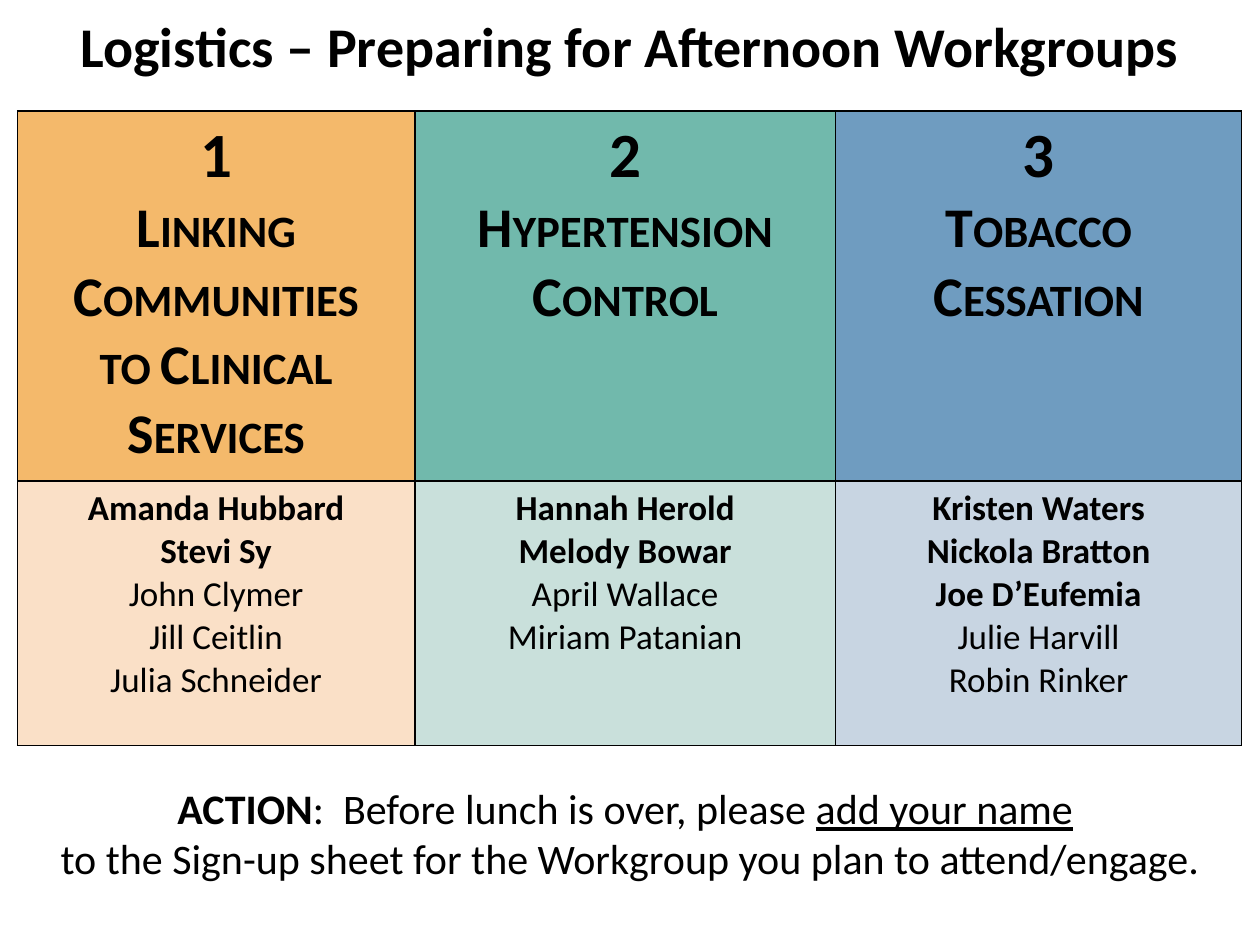
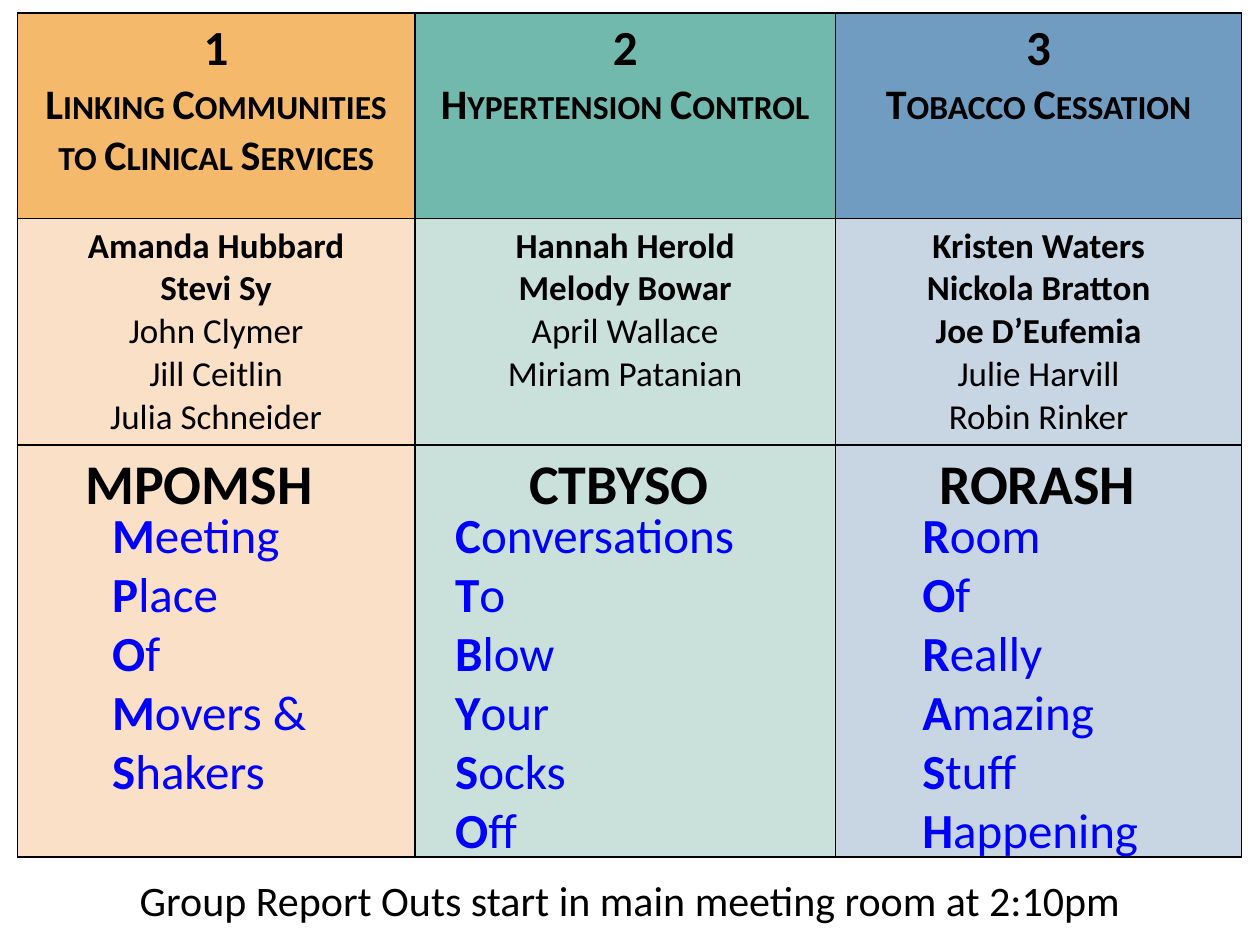
"""Build the two workgroup slides: preparing, and rooms with their acronyms."""
from lxml import etree
from pptx import Presentation
from pptx.dml.color import RGBColor
from pptx.enum.text import MSO_ANCHOR, MSO_AUTO_SIZE, PP_ALIGN
from pptx.oxml.ns import qn
from pptx.util import Pt

LEFT, CENTER = PP_ALIGN.LEFT, PP_ALIGN.CENTER
TOP, MIDDLE = MSO_ANCHOR.TOP, MSO_ANCHOR.MIDDLE
NO_FIT = MSO_AUTO_SIZE.NONE

FONT = "Calibri"
BLACK = RGBColor(0x00, 0x00, 0x00)
BLUE = RGBColor(0x00, 0x00, 0xFF)
DARK = [RGBColor(0xF4, 0xB9, 0x6B), RGBColor(0x71, 0xB9, 0xAC), RGBColor(0x6F, 0x9C, 0xC0)]
PALE = [RGBColor(0xFA, 0xE0, 0xC7), RGBColor(0xC9, 0xE0, 0xDB), RGBColor(0xC8, 0xD5, 0xE2)]

TITLE = "Logistics – Preparing for Afternoon Workgroups"
ACTION = [
    [("ACTION", "b"), (":  Before lunch is over, please ", ""), ("add your name", "u"), (" ", "")],
    [("to the Sign-up sheet for the Workgroup you plan to attend/engage.", "")],
]
REPORT = [[("Group Report Outs start in main meeting room at 2:10pm", "")]]

GROUPS = ["Linking Communities\vto Clinical Services", "Hypertension Control", "Tobacco Cessation"]
LEADS = [
    ["Amanda Hubbard", "Stevi Sy"],
    ["Hannah Herold", "Melody Bowar"],
    ["Kristen Waters", "Nickola Bratton", "Joe D’Eufemia"],
]
STAFF = [
    ["John Clymer", "Jill Ceitlin", "Julia Schneider"],
    ["April Wallace", "Miriam Patanian"],
    ["Julie Harvill", "Robin Rinker"],
]
ROOMS = [
    ("MPOMSH", ["Meeting", "Place", "Of", "Movers &", "Shakers"]),
    ("CTBYSO", ["Conversations", "To", "Blow", "Your", "Socks", "Off"]),
    ("RORASH", ["Room", "Of", "Really", "Amazing", "Stuff", "Happening"]),
]

EDGE, WIDE = 10, 700
COLS = [227, 240.5, 232]
INDENT = 45.4
CAP_Y, CAP_W, CAP_H = 252.5, 227.5, 46
LIST_Y, LINE_H = 285, 34
CAP_X = [0, 240, 479]
LIST_X = [11.5, 207.5, 474.5]
LIST_W = [184, 251, 227.5]


def write(frame, lines, size, color=BLACK, align=CENTER):
    """Fill a frame with paragraphs made of (text, marks) runs."""
    for i, line in enumerate(lines):
        para = frame.paragraphs[0] if i == 0 else frame.add_paragraph()
        para.alignment = align
        for text, marks in line:
            run = para.add_run()
            run.text = text
            style(run, size, color, "b" in marks)
            if "u" in marks:
                run.font.underline = True


def style(run, size, color, bold):
    """Set the font of one run."""
    font = run.font
    font.name, font.size, font.bold = FONT, Pt(size), bold
    font.color.rgb = color


def label(slide, box, lines, size, color=BLACK, align=CENTER, indent=0):
    """Add a wrapped text box."""
    frame = slide.shapes.add_textbox(*map(Pt, box)).text_frame
    frame.word_wrap = True
    frame.margin_left = Pt(7.2 + indent)
    write(frame, lines, size, color, align)


def paint(cell, color):
    """Give a cell black borders and a fill."""
    props = cell._tc.get_or_add_tcPr()
    for side in "LRTB":
        line = etree.SubElement(props, qn(f"a:ln{side}"), w=str(Pt(1)))
        fill = etree.SubElement(line, qn("a:solidFill"))
        etree.SubElement(fill, qn("a:srgbClr"), val=str(BLACK))
    cell.fill.solid()
    cell.fill.fore_color.rgb = color
    cell.vertical_anchor = TOP


def head(cell, number, group, big, small):
    """Write a group's number and its name in small capitals."""
    frame = cell.text_frame
    frame.text = f"{number}\n{group}"
    for para, size in zip(frame.paragraphs, (big, small)):
        para.alignment = CENTER
        for run in para.runs:
            style(run, size, BLACK, True)
            if size == small:
                run._r.get_or_add_rPr().set("cap", "small")


def grid(slide, top, rows, big, small):
    """Add the workgroup table with its heads and people."""
    box = map(Pt, (EDGE, top, WIDE, sum(rows)))
    table = slide.shapes.add_table(len(rows), len(COLS), *box).table
    table.first_row = table.horz_banding = False
    for row, high in zip(table.rows, rows):
        row.height = Pt(high)
    for col, wide in enumerate(COLS):
        table.columns[col].width = Pt(wide)
        for row in range(len(rows)):
            paint(table.cell(row, col), PALE[col] if row else DARK[col])
        head(table.cell(0, col), col + 1, GROUPS[col], big, small)
        people = [[(name, "b")] for name in LEADS[col]] + [[(name, "")] for name in STAFF[col]]
        write(table.cell(1, col).text_frame, people, 20)


def prepare(deck):
    """Build the slide that asks people to sign up."""
    slide = deck.slides.add_slide(deck.slide_layouts[5])
    title = slide.shapes.title
    title.left, title.top, title.width, title.height = map(Pt, (EDGE, 3, WIDE, 46))
    frame = title.text_frame
    frame.auto_size, frame.vertical_anchor = NO_FIT, MIDDLE
    write(frame, [[(TITLE, "b")]], 32)
    grid(slide, 63.5, [211.5, 151], 36, 32)
    label(slide, (EDGE, 443.5, WIDE, 65.5), ACTION, 24)


def rooms(deck):
    """Build the slide that names each group's room."""
    slide = deck.slides.add_slide(deck.slide_layouts[6])
    grid(slide, 7.4, [117.4, 129.4, 235.5], 28, 24)
    label(slide, (EDGE, 496, WIDE, 36), REPORT, 24)
    for (name, words), cap, left, wide in zip(ROOMS, CAP_X, LIST_X, LIST_W):
        lines = [[(word[0], "b"), (word[1:], "")] for word in words]
        box = (left, LIST_Y, wide, 7.2 + LINE_H * len(words))
        label(slide, box, lines, 28, BLUE, LEFT, INDENT)
        label(slide, (cap, CAP_Y, CAP_W, CAP_H), [[(name, "b")]], 32)


def main():
    """Make and save the deck."""
    deck = Presentation()
    deck.slide_width, deck.slide_height = Pt(720), Pt(540)
    prepare(deck)
    rooms(deck)
    deck.save("out.pptx")


if __name__ == "__main__":
    main()
